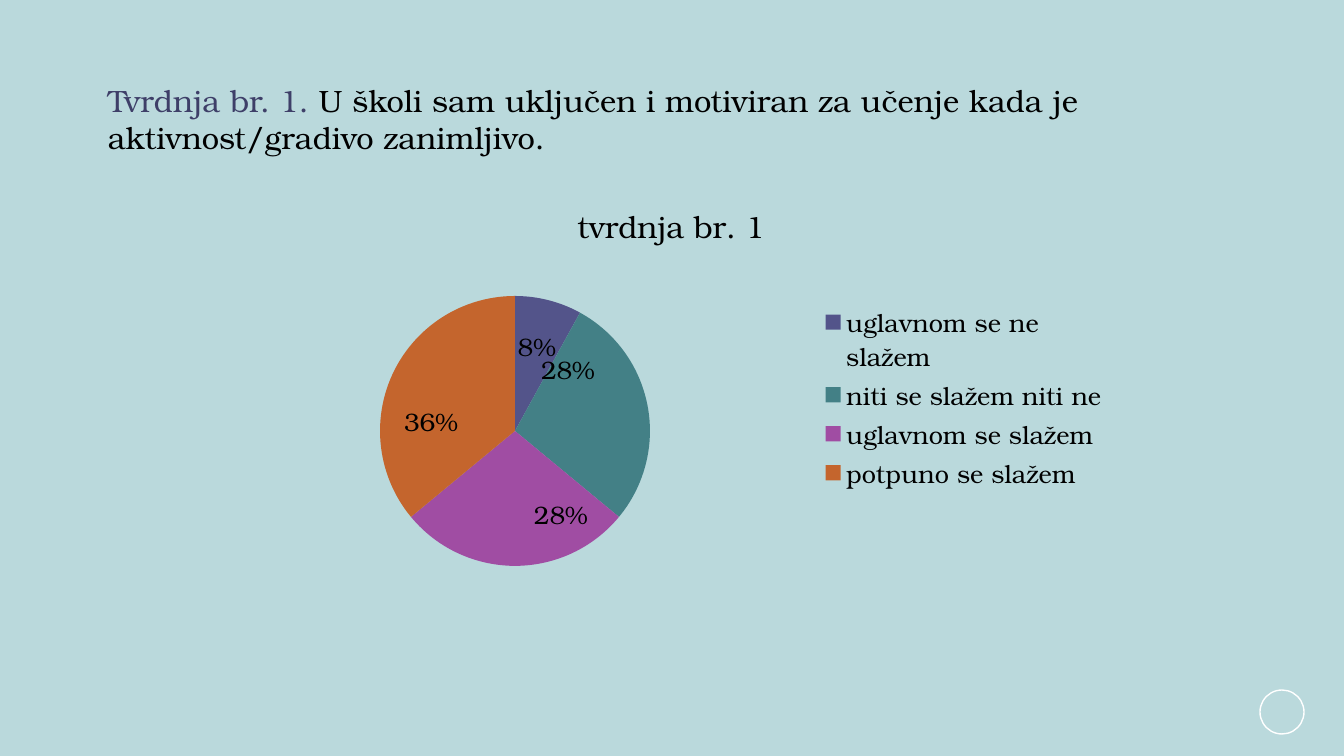
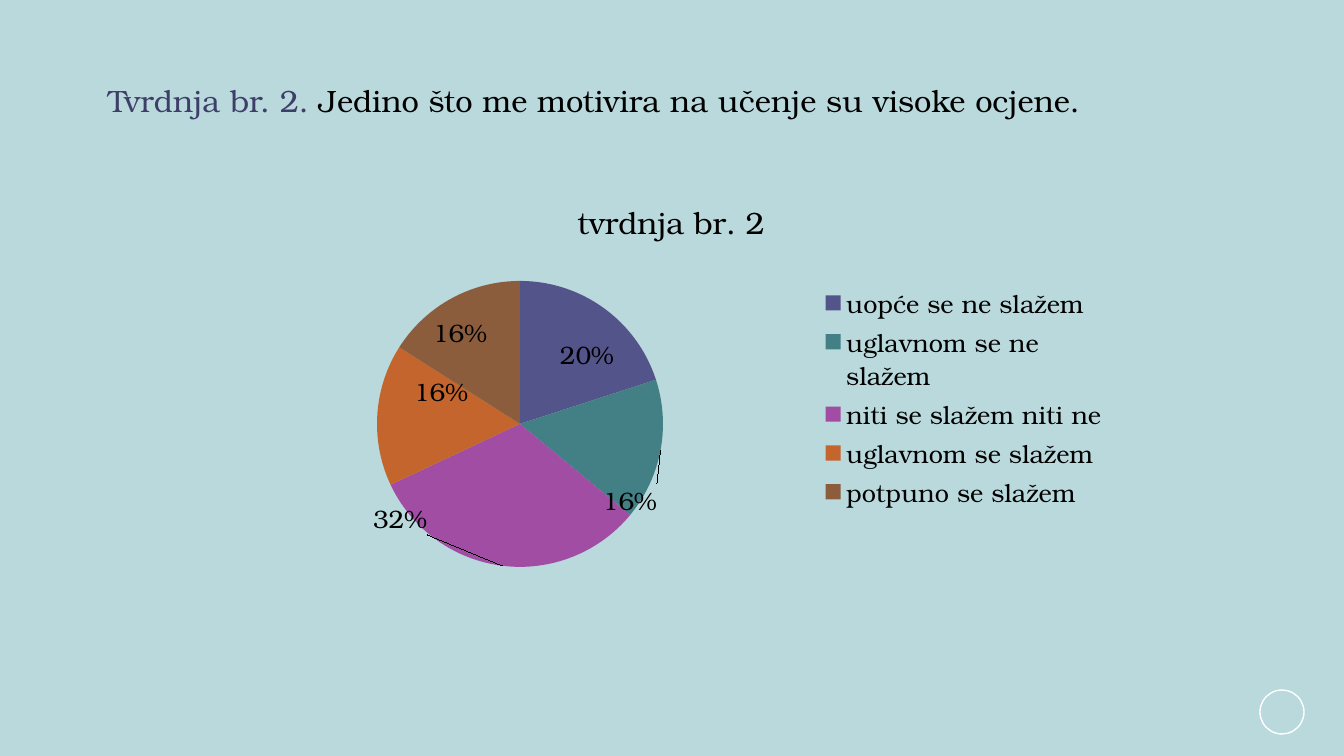
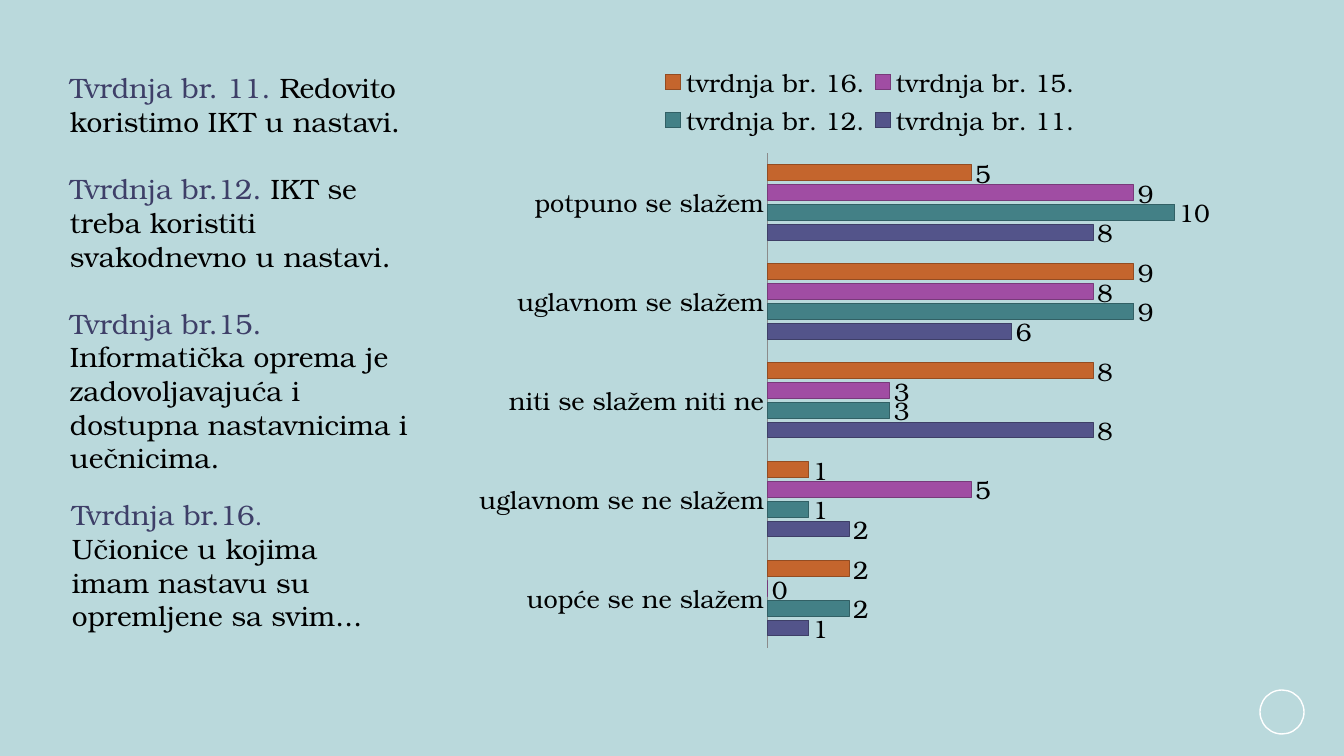
from dataclasses import dataclass
from math import cos, pi, sin

from lxml import etree
from pptx import Presentation
from pptx.chart.data import CategoryChartData
from pptx.dml.color import RGBColor
from pptx.enum.chart import (XL_CHART_TYPE, XL_LABEL_POSITION,
                             XL_LEGEND_POSITION, XL_TICK_MARK)
from pptx.enum.shapes import MSO_SHAPE
from pptx.enum.text import MSO_AUTO_SIZE
from pptx.oxml.ns import nsdecls, qn
from pptx.oxml import parse_xml
from pptx.util import Pt

PIE = XL_CHART_TYPE.PIE
BARS = XL_CHART_TYPE.BAR_CLUSTERED
LABEL_CENTER = XL_LABEL_POSITION.CENTER
LABEL_OUTSIDE = XL_LABEL_POSITION.OUTSIDE_END
LEGEND_RIGHT = XL_LEGEND_POSITION.RIGHT
LEGEND_TOP = XL_LEGEND_POSITION.TOP
NO_TICKS = XL_TICK_MARK.NONE
ELLIPSE = MSO_SHAPE.OVAL
GROW = MSO_AUTO_SIZE.SHAPE_TO_FIT_TEXT

SLIDE_W, SLIDE_H = 1344, 756
EMU_PER_PX = 12192000 / SLIDE_W


@dataclass(frozen=True)
class Theme:
    font: str = "TeX Gyre Bonum"
    background: str = "BAD9DC"
    ink: str = "000000"
    accent: str = "3E3F68"
    ring: str = "FFFFFF"
    axis: str = "8B8B8B"
    series: tuple = ("53548A", "438086", "A04DA3", "C4652D", "8B5D3D")
    statement: int = 22
    list_text: int = 20
    chart_text: int = 18
    list_gap: int = 24


THEME = Theme()


def px(*lengths):
    return [round(length * EMU_PER_PX) for length in lengths]


def rgb(color):
    return RGBColor.from_string(color)


def place(part, index, box, frame, inner=False):
    """Put a chart part at box, both box and the chart's frame in slide px."""
    for old in part.findall(qn("c:layout")):
        part.remove(old)
    left, top, width, height = frame
    shares = {"x": (box[0] - left) / width, "y": (box[1] - top) / height}
    if len(box) == 4:
        shares |= {"w": box[2] / width, "h": box[3] / height}
    layout = etree.Element(qn("c:layout"))
    manual = etree.SubElement(layout, qn("c:manualLayout"))
    if inner:
        etree.SubElement(manual, qn("c:layoutTarget"), val="inner")
    for side in ("x", "y"):
        etree.SubElement(manual, qn(f"c:{side}Mode"), val="edge")
    for side, share in shares.items():
        etree.SubElement(manual, qn(f"c:{side}"), val=f"{share:.4f}")
    part.insert(index, layout)


def percent_label(index, dx, dy):
    """A percentage label moved by shares of the chart from its slice's centre."""
    return parse_xml(
        f'<c:dLbl {nsdecls("c")}><c:idx val="{index}"/>'
        f'<c:layout><c:manualLayout><c:x val="{dx:.4f}"/><c:y val="{dy:.4f}"/>'
        '</c:manualLayout></c:layout><c:dLblPos val="ctr"/>'
        '<c:showLegendKey val="0"/><c:showVal val="0"/><c:showCatName val="0"/>'
        '<c:showSerName val="0"/><c:showPercent val="1"/>'
        '<c:showBubbleSize val="0"/></c:dLbl>')


class Deck:
    def __init__(self, theme):
        self.theme = theme
        self.presentation = Presentation()
        self.presentation.slide_width, self.presentation.slide_height = px(SLIDE_W, SLIDE_H)
        fill = self.presentation.slide_master.background.fill
        fill.solid()
        fill.fore_color.rgb = rgb(theme.background)
        self.slide = None

    def new_slide(self):
        self.slide = self.presentation.slides.add_slide(self.presentation.slide_layouts[6])
        ring = self.slide.shapes.add_shape(ELLIPSE, *px(1260, 690, 44, 44))
        ring.shadow.inherit = False
        ring.fill.background()
        ring.line.color.rgb = rgb(self.theme.ring)
        ring.line.width = Pt(1)

    def style_font(self, font, size, color):
        font.name = self.theme.font
        font.size = Pt(size)
        font.color.rgb = rgb(color)

    def text(self, box, paragraphs):
        """Each paragraph is (space before, runs); each run is (text, size, color)."""
        frame = self.slide.shapes.add_textbox(*px(*box)).text_frame
        frame.word_wrap = True
        frame.auto_size = GROW
        for index, (gap, runs) in enumerate(paragraphs):
            paragraph = frame.add_paragraph() if index else frame.paragraphs[0]
            if gap:
                paragraph.space_before = Pt(gap)
            for words, size, color in runs:
                run = paragraph.add_run()
                run.text = words
                self.style_font(run.font, size, color)

    def statement(self, number, words, height):
        size = self.theme.statement
        self.text((98, 77, 1103, height),
                  [(0, [(f"Tvrdnja br. {number}. ", size, self.theme.accent),
                        (words, size, self.theme.ink)])])

    def chart(self, kind, frame, categories, series, legend_position, legend_box):
        data = CategoryChartData()
        data.categories = categories
        for name, values in series:
            data.add_series(name, values)
        chart = self.slide.shapes.add_chart(kind, *px(*frame), data).chart
        self.style_font(chart.font, self.theme.chart_text, self.theme.ink)
        chart.has_title = False
        chart.has_legend = True
        chart.legend.position = legend_position
        chart.legend.include_in_layout = False
        place(chart._chartSpace.find(".//" + qn("c:legend")), 1, legend_box, frame)
        return chart

    def pie(self, title, title_top, name, slices, center, radius, label_centers, legend_box):
        frame = (221, 172, 896, 448)
        chart = self.chart(PIE, frame, list(slices), [(name, list(slices.values()))],
                           LEGEND_RIGHT, legend_box)
        chart.has_title = True
        heading = chart.chart_title.text_frame
        heading.text = title
        font = heading.paragraphs[0].runs[0].font
        self.style_font(font, self.theme.statement, self.theme.ink)
        font.bold = False
        root = chart._chartSpace
        place(root.find(".//" + qn("c:title")), 1, (572, title_top), frame)
        cx, cy = center
        place(root.find(".//" + qn("c:plotArea")), 0,
              (cx - radius, cy - radius, 2 * radius, 2 * radius), frame, inner=True)

        plot = chart.plots[0]
        plot.vary_by_categories = True
        pie_series = plot.series[0]
        labels = pie_series.data_labels
        labels.show_percentage = True
        labels.show_value = False
        labels.position = LABEL_CENTER
        total, passed = sum(slices.values()), 0
        for index, (value, (x, y)) in enumerate(zip(slices.values(), label_centers)):
            fill = pie_series.points[index].format.fill
            fill.solid()
            fill.fore_color.rgb = rgb(self.theme.series[index])
            angle = 2 * pi * (passed + value / 2) / total
            passed += value
            dx = x - cx - radius / 2 * sin(angle)
            dy = y - cy + radius / 2 * cos(angle)
            labels._element.insert(index, percent_label(index, dx / frame[2], dy / frame[3]))

    def bars(self, frame, categories, series, plot_box, legend_box):
        chart = self.chart(BARS, frame, categories, series, LEGEND_TOP, legend_box)
        place(chart._chartSpace.find(".//" + qn("c:plotArea")), 0, plot_box, frame, inner=True)
        values = chart.value_axis
        values.visible = False
        values.has_major_gridlines = False
        values.minimum_scale, values.maximum_scale = 0, 12
        answers = chart.category_axis
        answers.major_tick_mark = answers.minor_tick_mark = NO_TICKS
        answers.format.line.color.rgb = rgb(self.theme.axis)
        plot = chart.plots[0]
        plot.vary_by_categories = False
        plot.gap_width, plot.overlap = 150, -25
        for bar_series, color in zip(plot.series, self.theme.series):
            look = bar_series.format
            look.fill.solid()
            look.fill.fore_color.rgb = rgb(color)
            look.line.color.rgb = rgb(color)
            look.line.color.brightness = -0.25
            look.line.width = Pt(0.75)
            bar_series.data_labels.show_value = True
            bar_series.data_labels.position = LABEL_OUTSIDE


ANSWERS = ["uopće se ne slažem", "uglavnom se ne slažem", "niti se slažem niti ne",
           "uglavnom se slažem", "potpuno se slažem"]


def main():
    deck = Deck(THEME)

    deck.new_slide()
    deck.pie("tvrdnja br. 1", 197, "tvrdnja br. 1",
             dict(zip(ANSWERS[1:], (8, 28, 28, 36))), (515, 431), 135,
             [(537, 346), (568, 369), (561, 514), (431, 421)], (820, 300, 287, 195))
    deck.statement(1, "U školi sam uključen i motiviran za učenje kada je "
                      "aktivnost/gradivo zanimljivo.", 85)

    deck.new_slide()
    deck.pie("tvrdnja br. 2", 193, "Series 1",
             dict(zip(ANSWERS, (20, 16, 32, 16, 16))), (520, 424), 143,
             [(587, 354), (630, 500), (400, 518), (441, 391), (460, 332)],
             (820, 281, 287, 233))
    deck.statement(2, "Jedino što me motivira na učenje su visoke ocjene.", 47)

    deck.new_slide()
    deck.bars((464, 51, 808, 609), ANSWERS,
              [("tvrdnja br. 11.", (1, 2, 8, 6, 8)),
               ("tvrdnja br. 12.", (2, 1, 3, 9, 10)),
               ("tvrdnja br. 15.", (0, 5, 3, 8, 9)),
               ("tvrdnja br. 16.", (2, 1, 8, 9, 5))],
              (768, 153, 488, 495), (655, 62, 430, 78))
    size, gap = THEME.list_text, THEME.list_gap
    accent, ink = THEME.accent, THEME.ink
    deck.text((60, 66, 378, 689), [
        (0, [("Tvrdnja br. 11. ", size, accent),
             ("Redovito koristimo IKT u nastavi.", size, ink)]),
        (gap, [("Tvrdnja br.12. ", size, accent),
               ("IKT se treba koristiti svakodnevno u nastavi.", size, ink)]),
        (gap, [("Tvrdnja br.15.", size, accent)]),
        (0, [("Informatička oprema je zadovoljavajuća i dostupna nastavnicima i "
              "uečnicima.", size, ink)])])
    deck.text((62, 493, 344, 176), [
        (0, [("Tvrdnja br.16", size, accent), (".", THEME.chart_text, accent)]),
        (0, [("Učionice u kojima imam nastavu su opremljene sa svim...", size, ink)])])

    deck.presentation.save("out.pptx")


if __name__ == "__main__":
    main()
